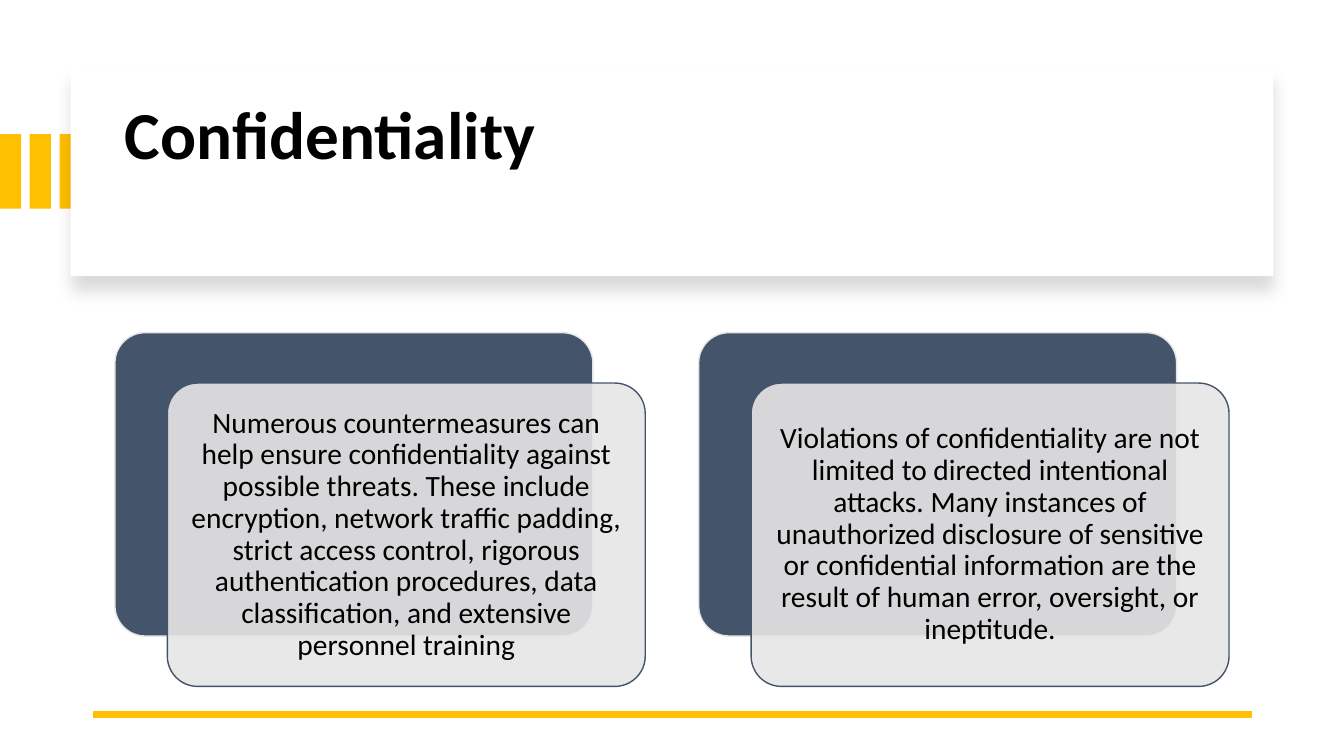
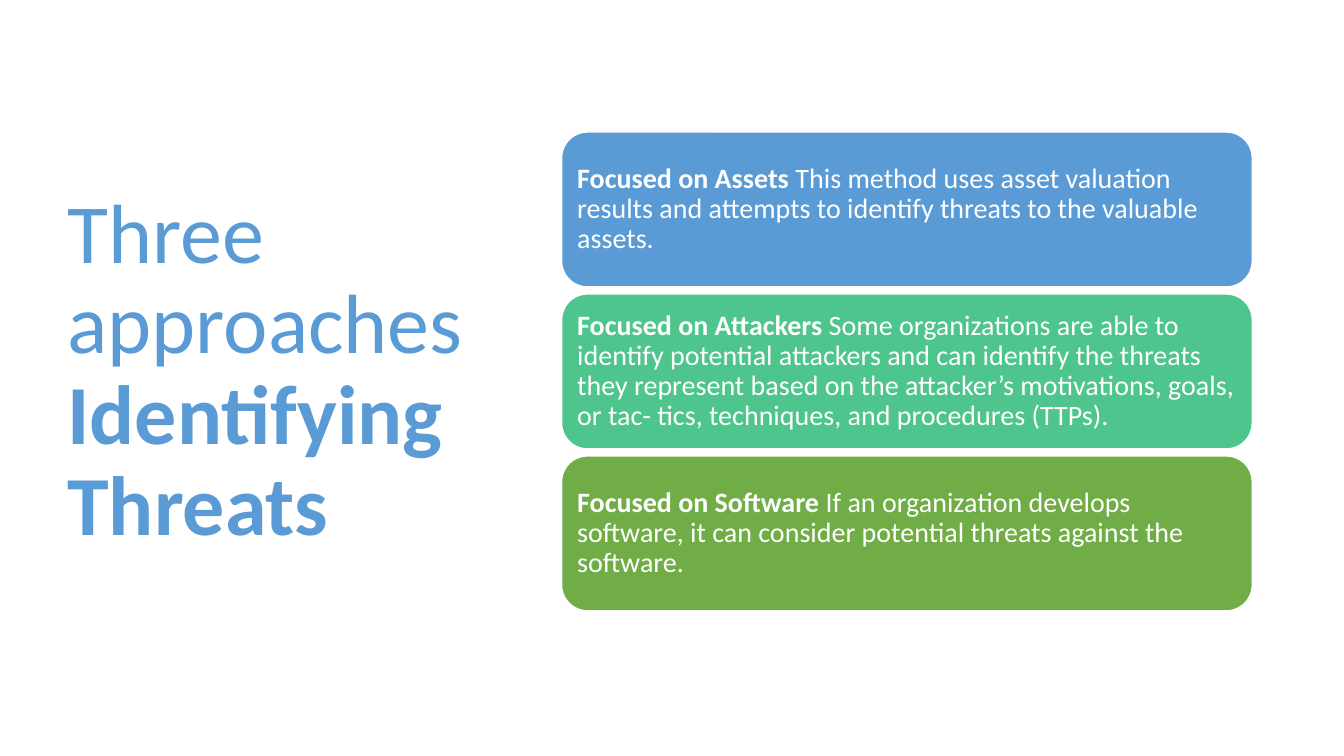
from dataclasses import dataclass

from lxml.etree import SubElement
from pptx import Presentation
from pptx.dml.color import RGBColor as RGB
from pptx.enum.shapes import MSO_CONNECTOR as Connector, MSO_SHAPE as Shape
from pptx.enum.text import MSO_ANCHOR as Anchor, PP_ALIGN as Align
from pptx.oxml.ns import qn
from pptx.util import Inches, Pt


@dataclass(frozen=True)
class Theme:
    font: str = "Calibri"
    black: str = "000000"
    white: str = "FFFFFF"
    gold: str = "FFC000"
    slate: str = "44546A"
    mist: str = "E7E6E6"
    blue: str = "5B9BD5"
    mint: str = "4DC58D"
    green: str = "70AD47"
    heading: int = 48
    statement: int = 60
    card: int = 21
    approach: int = 20
    spacing: float = 0.9


THEME = Theme()

COUNTERMEASURES = (
    "Numerous countermeasures can help ensure confidentiality against possible "
    "threats. These include encryption, network traffic padding, strict access "
    "control, rigorous authentication procedures, data classification, and "
    "extensive personnel training"
)
VIOLATIONS = (
    "Violations of confidentiality are not limited to directed intentional attacks. "
    "Many instances of unauthorized disclosure of sensitive or confidential "
    "information are the result of human error, oversight, or ineptitude."
)
APPROACHES = [
    ("Focused on Assets ",
     "This method uses asset valuation results and attempts to identify threats "
     "to the valuable assets.", THEME.blue),
    ("Focused on Attackers ",
     "Some organizations are able to identify potential attackers and can identify "
     "the threats they represent based on the attacker’s motivations, goals, or "
     "tac- tics, techniques, and procedures (TTPs).", THEME.mint),
    ("Focused on Software ",
     "If an organization develops software, it can consider potential threats "
     "against the software.", THEME.green),
]


def inches(*lengths):
    return [Inches(length) for length in lengths]


def add_block(slide, box, fill, outline=None, kind=Shape.RECTANGLE, corner=None):
    block = slide.shapes.add_shape(kind, *inches(*box))
    block.shadow.inherit = False
    block.fill.solid()
    block.fill.fore_color.rgb = RGB.from_string(fill)
    if outline:
        block.line.color.rgb = RGB.from_string(outline)
        block.line.width = Pt(1)
    else:
        block.line.fill.background()
    if corner is not None:
        block.adjustments[0] = corner
    return block


def write(holder, runs, size, color, align=Align.LEFT, inset=(0.1, 0.05)):
    frame = holder.text_frame
    frame.word_wrap = True
    frame.vertical_anchor = Anchor.MIDDLE
    frame.margin_left = frame.margin_right = Inches(inset[0])
    frame.margin_top = frame.margin_bottom = Inches(inset[1])
    paragraph = frame.paragraphs[0]
    paragraph.alignment = align
    paragraph.line_spacing = THEME.spacing
    font = paragraph.font
    font.name, font.size = THEME.font, Pt(size)
    font.color.rgb = RGB.from_string(color)
    for text, bold in runs:
        run = paragraph.add_run()
        run.text = text
        run.font.bold = bold


def add_title(slide, box, runs, size, color):
    write(slide.shapes.add_textbox(*inches(*box)), runs, size, color)


def set_alpha(color, percent):
    SubElement(color, qn("a:alpha"), val=str(percent * 1000))


def cast_shadow(block):
    effects = block._element.spPr.find(qn("a:effectLst"))
    outer = SubElement(effects, qn("a:outerShdw"), blurRad=str(Pt(11)),
                       dist=str(Pt(10)), dir="5400000", algn="t", rotWithShape="0")
    set_alpha(SubElement(outer, qn("a:srgbClr"), val=THEME.black), 15)


def add_header(slide, box, title):
    left, top, width, height = box
    for index in range(3):
        add_block(slide, (index * 0.59 / 2, top + 0.66, 0.21, 0.74), THEME.gold)
    cast_shadow(add_block(slide, box, THEME.white))
    add_title(slide, (left + 0.44, top + 0.22, width - 0.8, 0.96),
              [(title, True)], THEME.heading, THEME.black)


def add_footer_rule(slide, left, right, top):
    rule = slide.shapes.add_connector(Connector.STRAIGHT, *inches(right, top, left, top))
    rule.line.color.rgb = RGB.from_string(THEME.gold)
    rule.line.width = Pt(4.5)
    SubElement(rule._element.spPr, qn("a:effectLst"))


def add_layered_card(slide, box, text):
    left, top, width, height = box
    shift_x, shift_y = 0.52, 0.5
    size = (width - shift_x, height - shift_y)
    rounded = dict(kind=Shape.ROUNDED_RECTANGLE, corner=0.1)
    add_block(slide, (left, top, *size), THEME.slate, THEME.mist, **rounded)
    front = add_block(slide, (left + shift_x, top + shift_y, *size),
                      THEME.mist, THEME.slate, **rounded)
    set_alpha(front._element.spPr.find(qn("a:solidFill"))[0], 90)
    write(front, [(text, False)], THEME.card, THEME.black, Align.CENTER, (0.09, 0.09))


def add_approaches(slide, box, approaches, gap=0.07):
    left, top, width, height = box
    row = (height - gap * (len(approaches) - 1)) / len(approaches)
    for index, (focus, method, color) in enumerate(approaches):
        panel = add_block(slide, (left, top + index * (row + gap), width, row),
                          color, THEME.white, Shape.ROUNDED_RECTANGLE)
        write(panel, [(focus, True), (method, False)], THEME.approach, THEME.white,
              inset=(0.08, 0.08))


def build_confidentiality(slide):
    add_header(slide, (0.7, 0.67, 11.93, 2.07), "Confidentiality")
    add_footer_rule(slide, 0.92, 12.42, 7.09)
    for index, text in enumerate((COUNTERMEASURES, VIOLATIONS)):
        add_layered_card(slide, (1.14 + index * 5.79, 3.3, 5.26, 3.51), text)


def build_approaches(slide):
    add_title(slide, (0.57, 0.68, 4.16, 6.02),
              [("Three approaches ", False), ("Identifying Threats", True)],
              THEME.statement, THEME.blue)
    add_approaches(slide, (5.57, 1.31, 6.85, 4.75), APPROACHES)


def main():
    deck = Presentation()
    deck.slide_width, deck.slide_height = inches(13.33, 7.5)
    for build in (build_confidentiality, build_approaches):
        build(deck.slides.add_slide(deck.slide_layouts[6]))
    deck.save("out.pptx")


if __name__ == "__main__":
    main()
